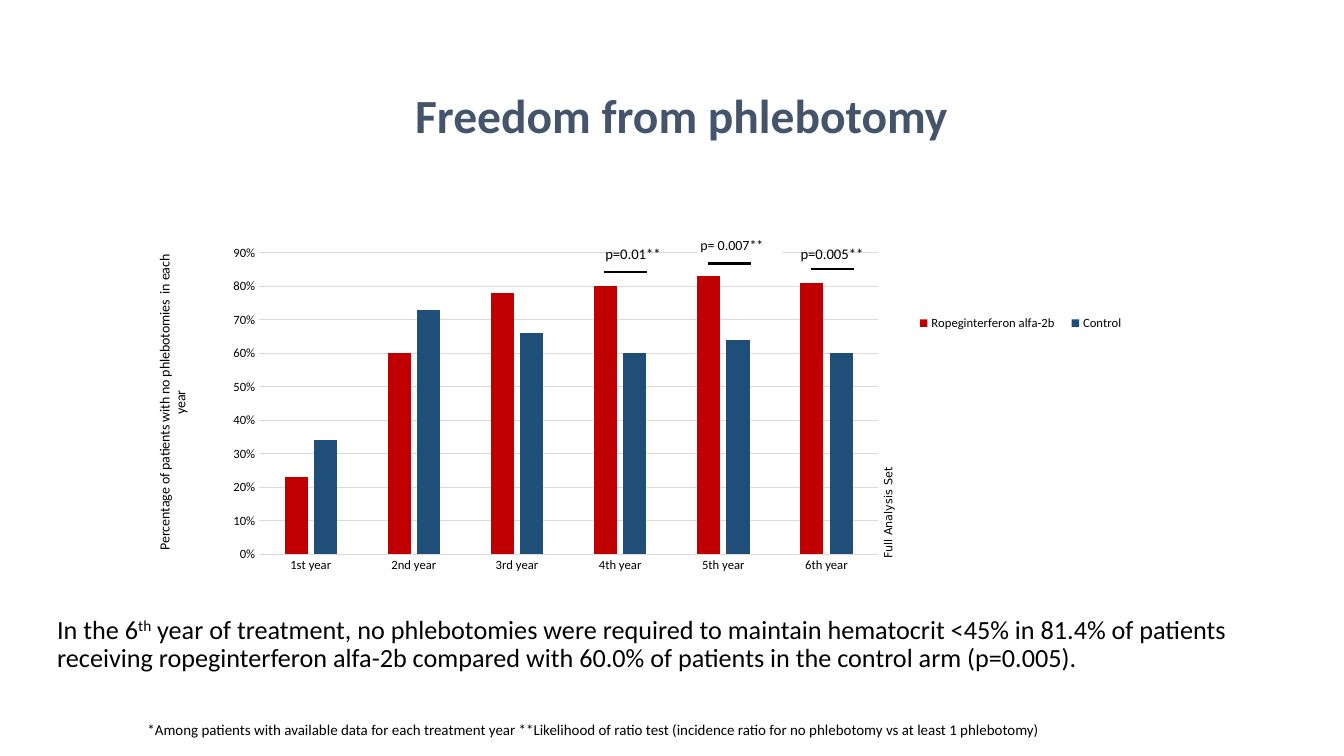
from lxml.etree import SubElement
from pptx import Presentation
from pptx.chart.data import CategoryChartData
from pptx.dml.color import RGBColor
from pptx.enum.chart import XL_CHART_TYPE, XL_LEGEND_POSITION, XL_TICK_MARK
from pptx.enum.shapes import MSO_CONNECTOR, MSO_SHAPE
from pptx.enum.text import MSO_ANCHOR, PP_ALIGN
from pptx.oxml import parse_xml
from pptx.oxml.ns import nsdecls, qn
from pptx.util import Emu, Pt

PX = 9525
COLORS = {
    "ink": "000000",
    "heading": "44546A",
    "grid": "D9D9D9",
    "paper": "FFFFFF",
    "treatment": "C00000",
    "control": "1F4E79",
}


def px(*lengths):
    return [Emu(length * PX) for length in lengths]


def color(name):
    return RGBColor.from_string(COLORS[name])


def style_font(font, size, ink="ink", face="Calibri", bold=False):
    font.size = Pt(size)
    font.name = face
    font.bold = bold
    font.color.rgb = color(ink)


def write(frame, text, size, ink="ink", face="Calibri", bold=False,
          align=PP_ALIGN.LEFT, spacing=None, before=None, anchor=MSO_ANCHOR.TOP):
    frame.word_wrap = True
    frame.vertical_anchor = anchor
    paragraph = frame.paragraphs[0]
    paragraph.alignment = align
    paragraph.line_spacing = spacing
    if before:
        paragraph.space_before = Pt(before)
    for position, part in enumerate(text.split("^")):
        run = paragraph.add_run()
        run.text = part
        style_font(run.font, size, ink, face, bold)
        if position % 2:
            run.font._element.set("baseline", "30000")


def place(element, index, target=None, **fractions):
    for old in element.findall(qn("c:layout")):
        element.remove(old)
    layout = parse_xml(f"<c:layout {nsdecls('c')}><c:manualLayout/></c:layout>")
    settings = {"layoutTarget": target} if target else {}
    settings.update(xMode="edge", yMode="edge", **fractions)
    for name, value in settings.items():
        SubElement(layout[0], qn(f"c:{name}")).set("val", str(value))
    element.insert(index, layout)


class Slide:
    def __init__(self, deck):
        self.shapes = deck.slides.add_slide(deck.slide_layouts[6]).shapes

    def text(self, box, text, size, rotation=0, **style):
        label = self.shapes.add_textbox(*px(*box))
        label.rotation = rotation
        write(label.text_frame, text, size, **style)

    def plate(self, box, text, size):
        plate = self.shapes.add_shape(MSO_SHAPE.RECTANGLE, *px(*box))
        plate.shadow.inherit = False
        plate.fill.solid()
        plate.fill.fore_color.rgb = color("paper")
        plate.line.fill.background()
        frame = plate.text_frame
        frame.margin_left, frame.margin_top, frame.margin_right, frame.margin_bottom = px(3, 3, 3, 3)
        write(frame, text, size, anchor=MSO_ANCHOR.MIDDLE)

    def rule(self, left, top, width):
        rule = self.shapes.add_connector(
            MSO_CONNECTOR.STRAIGHT, *px(left, top, left + width, top))
        rule.line.color.rgb = color("ink")
        rule.line.width = Pt(1.5)
        SubElement(rule._element.spPr, qn("a:effectLst"))

    def columns(self, box, years, groups, axis_title):
        data = CategoryChartData(number_format="0%")
        data.categories = years
        for name, values, _ in groups:
            data.add_series(name, values)
        chart = self.shapes.add_chart(
            XL_CHART_TYPE.COLUMN_CLUSTERED, *px(*box), data).chart
        style_font(chart.font, 10)
        chart.has_title = False
        plot = chart.plots[0]
        plot.gap_width, plot.overlap = 219, -27
        plot.vary_by_categories = False
        for series, (_, _, fill) in zip(plot.series, groups):
            series.format.fill.solid()
            series.format.fill.fore_color.rgb = color(fill)
        self.axes(chart, axis_title)
        chart.has_legend = True
        chart.legend.position = XL_LEGEND_POSITION.RIGHT
        chart.legend.include_in_layout = False
        style_font(chart.legend.font, 9)
        place(chart.legend._element, 1, x=0.76, y=0.23, w=0.22, h=0.08)
        place(chart._chartSpace.chart.plotArea, 0, "inner",
              x=0.133, y=0.087, w=0.599, h=0.785)

    def axes(self, chart, title):
        years, share = chart.category_axis, chart.value_axis
        for axis in (years, share):
            axis.major_tick_mark = axis.minor_tick_mark = XL_TICK_MARK.NONE
            style_font(axis.tick_labels.font, 9)
        share.minimum_scale, share.maximum_scale, share.major_unit = 0, 0.9, 0.1
        share.tick_labels.number_format = "0%"
        share.tick_labels.number_format_is_linked = False
        share.format.line.fill.background()
        for line in (years.format.line, share.major_gridlines.format.line):
            line.color.rgb = color("grid")
            line.width = Pt(0.75)
        write(share.axis_title.text_frame, title, 10, align=PP_ALIGN.CENTER)
        place(share.axis_title._element, 1, x=0.03, y=0.085)


def main():
    deck = Presentation()
    deck.slide_width, deck.slide_height = px(1280, 720)
    slide = Slide(deck)
    slide.columns(
        (116, 209, 984, 366),
        ["1st year", "2nd year", "3rd year", "4th year", "5th year", "6th year"],
        [("Ropeginterferon alfa-2b", (0.23, 0.6, 0.78, 0.8, 0.83, 0.81), "treatment"),
         ("Control", (0.34, 0.73, 0.66, 0.6, 0.64, 0.6), "control")],
        "Percentage of patients with no phlebotomies  in each year")
    slide.text((358, 70, 554, 84), "Freedom from phlebotomy", 34, ink="heading",
               bold=True, align=PP_ALIGN.RIGHT, spacing=0.9, anchor=MSO_ANCHOR.MIDDLE)
    slide.text((45, 583, 1179, 113),
               "In the 6^th^ year of treatment, no phlebotomies were required to maintain "
               "hematocrit <45% in 81.4% of patients receiving ropeginterferon alfa-2b "
               "compared with 60.0% of patients in the control arm (p=0.005).",
               18.7, spacing=0.9, before=10)
    slide.text((567, 228, 99, 27), "p=0.01**", 10.5)
    slide.text((753, 228, 121, 27), "p=0.005**", 10.5)
    slide.text((131, 682, 905, 27),
               "*Among patients with available data for each treatment year "
               "**Likelihood of ratio test (incidence ratio for no phlebotomy "
               "vs at least 1 phlebotomy)", 10.7)
    for left, top in ((772, 256), (674, 251), (575, 259)):
        slide.rule(left, top, 41)
    slide.text((767, 451, 158, 23), "Full Analysis Set", 8, rotation=270, face="DejaVu Sans")
    slide.plate((664, 223, 81, 21), "p= 0.007**", 10)
    deck.save("out.pptx")


if __name__ == "__main__":
    main()
